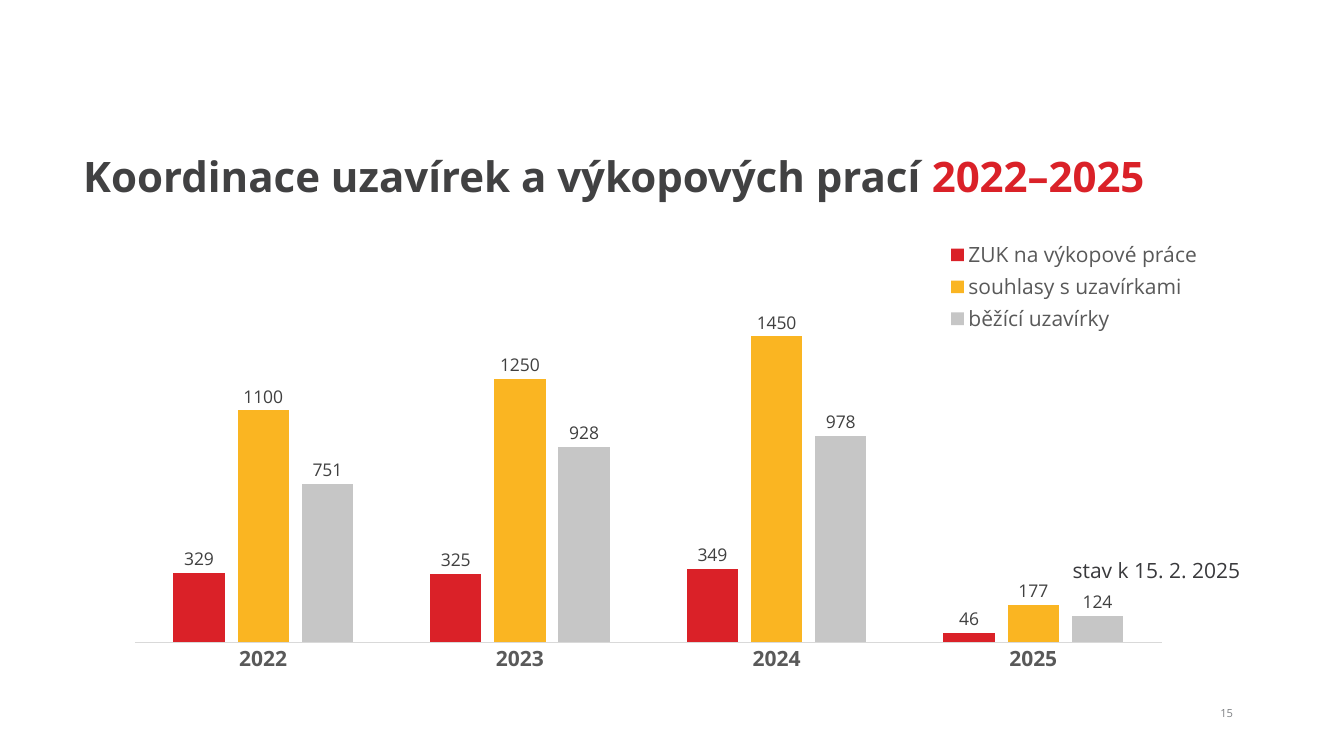
from lxml import etree
from pptx import Presentation
from pptx import util as u
from pptx.chart.data import CategoryChartData
from pptx.dml.color import RGBColor
from pptx.enum import chart as c
from pptx.enum import text as t
from pptx.oxml import ns

DARK = RGBColor(0x41, 0x41, 0x42)
RED = RGBColor(0xDA, 0x21, 0x28)
YELLOW = RGBColor(0xFA, 0xB5, 0x22)
SILVER = RGBColor(0xC6, 0xC6, 0xC6)
AXIS_TEXT = RGBColor(0x59, 0x59, 0x59)
AXIS_LINE = RGBColor(0xD9, 0xD9, 0xD9)
LABEL = RGBColor(0x40, 0x40, 0x40)
NOTE = RGBColor(0x39, 0x39, 0x3C)
MUTED = RGBColor(0x80, 0x82, 0x85)

YEARS = ["2022", "2023", "2024", "2025"]
SERIES = [
    ("ZUK na výkopové práce", [329, 325, 349, 46], RED),
    ("souhlasy s uzavírkami", [1100, 1250, 1450, 177], YELLOW),
    ("běžící uzavírky", [751, 928, 978, 124], SILVER),
]


class SlideBuilder:
    font_name = "Open Sans"
    columns = rows = 100

    def __init__(self, presentation):
        self.width = presentation.slide_width
        self.height = presentation.slide_height
        self.slide = presentation.slides.add_slide(presentation.slide_layouts[5])

    def box(self, left, top, width, height):
        column, row = self.width / self.columns, self.height / self.rows
        return [round(n) for n in (left * column, top * row, width * column, height * row)]

    def style(self, font, size, color, bold=False):
        font.name, font.size, font.bold = self.font_name, u.Pt(size), bold
        font.color.rgb = color

    def fill_text(self, shape, runs, size, anchor, align, bold=False, inset=0.0, wrap=True):
        frame = shape.text_frame
        frame.word_wrap = wrap
        frame.auto_size = t.MSO_AUTO_SIZE.NONE if wrap else t.MSO_AUTO_SIZE.SHAPE_TO_FIT_TEXT
        frame.vertical_anchor = anchor
        frame.margin_left = frame.margin_right = u.Inches(inset)
        frame.margin_top = frame.margin_bottom = u.Inches(inset / 2)
        paragraph = frame.paragraphs[0]
        paragraph.alignment = align
        for words, color in runs:
            run = paragraph.add_run()
            run.text = words
            self.style(run.font, size, color, bold)

    def title(self, place, runs):
        shape = self.slide.shapes.title
        shape.left, shape.top, shape.width, shape.height = self.box(*place)
        self.fill_text(shape, runs, 60, t.MSO_ANCHOR.BOTTOM, t.PP_ALIGN.LEFT, bold=True)

    def text(self, place, words, size, color, anchor, align, **options):
        shape = self.slide.shapes.add_textbox(*self.box(*place))
        self.fill_text(shape, [(words, color)], size, anchor, align, **options)

    def layout(self, element, place, inner=False):
        for old in element.findall(ns.qn("c:layout")):
            element.remove(old)
        layout = etree.Element(ns.qn("c:layout"))
        manual = etree.SubElement(layout, ns.qn("c:manualLayout"))
        settings = [("layoutTarget", "inner")] if inner else []
        settings += [("xMode", "edge"), ("yMode", "edge"), *zip("xywh", place)]
        for name, value in settings:
            etree.SubElement(manual, ns.qn(f"c:{name}")).set("val", str(value))
        element.insert(0 if inner else 1, layout)

    def column_chart(self, place, categories, series, maximum, plot_place, legend_place):
        data = CategoryChartData()
        data.categories = categories
        for name, values, _ in series:
            data.add_series(name, values)
        frame = self.slide.shapes.add_chart(
            c.XL_CHART_TYPE.COLUMN_CLUSTERED, *self.box(*place), data)
        chart = frame.chart
        chart.has_title = False
        self.style(chart.font, 25, LABEL)

        plot = chart.plots[0]
        plot.gap_width, plot.overlap, plot.vary_by_categories = 150, -25, False
        for column, (_, _, color) in zip(plot.series, series):
            column.format.fill.solid()
            column.format.fill.fore_color.rgb = color
            column.invert_if_negative = False
            labels = column.data_labels
            labels.show_value = True
            labels.position = c.XL_LABEL_POSITION.OUTSIDE_END
            self.style(labels.font, 25, LABEL)

        value_axis = chart.value_axis
        value_axis.visible = value_axis.has_major_gridlines = False
        value_axis.minimum_scale, value_axis.maximum_scale = 0, maximum
        category_axis = chart.category_axis
        category_axis.major_tick_mark = c.XL_TICK_MARK.NONE
        category_axis.format.line.color.rgb = AXIS_LINE
        category_axis.format.line.width = u.Pt(0.75)
        self.style(category_axis.tick_labels.font, 30, AXIS_TEXT, bold=True)

        chart.has_legend = True
        legend = chart.legend
        legend.position = c.XL_LEGEND_POSITION.CORNER
        legend.include_in_layout = False
        self.style(legend.font, 30, AXIS_TEXT)
        self.layout(legend._element, legend_place)
        self.layout(chart._chartSpace.chart.plotArea, plot_place, inner=True)


def main():
    presentation = Presentation()
    presentation.slide_width, presentation.slide_height = u.Inches(26.66), u.Inches(15)
    builder = SlideBuilder(presentation)
    builder.title((6.19, 12.73, 85.56, 13.87),
                  [("Koordinace uzavírek a výkopových prací ", DARK), ("2022–2025", RED)])
    builder.text((86.12, 91.6, 5.63, 5.33), "15", 16, MUTED,
                 t.MSO_ANCHOR.MIDDLE, t.PP_ALIGN.RIGHT)
    builder.column_chart((9.23, 30.8, 80.42, 59.53), YEARS, SERIES, 1600,
                         plot_place=(0.01, 0.16, 0.95, 0.75),
                         legend_place=(0.76, 0.01, 0.24, 0.22))
    builder.text((79.44, 73.47, 13.35, 4.07), "stav k 15. 2. 2025", 30, NOTE,
                 t.MSO_ANCHOR.TOP, t.PP_ALIGN.LEFT, inset=0.1, wrap=False)
    presentation.save("out.pptx")


if __name__ == "__main__":
    main()
